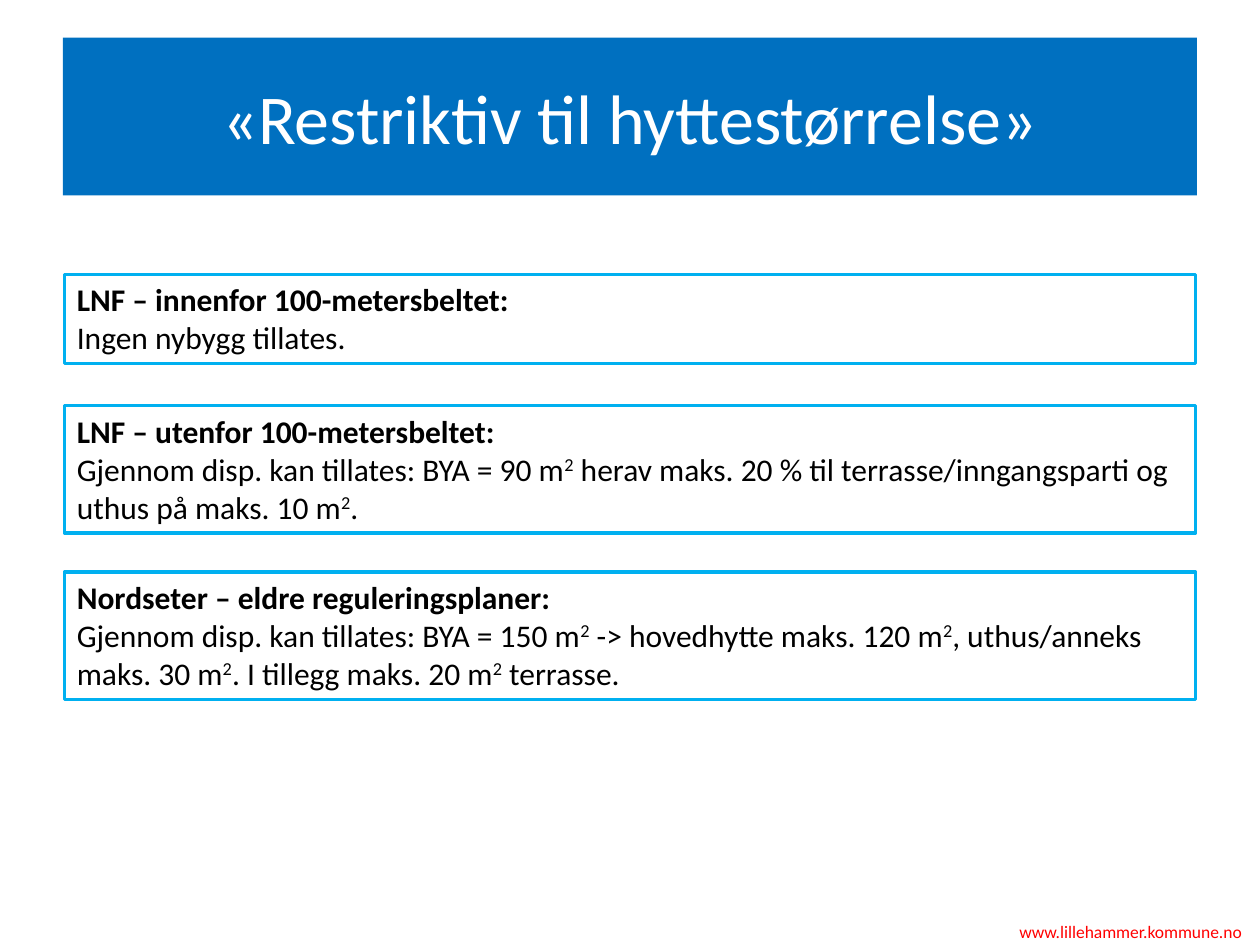
"""Build the slide on restrictions to cabin size."""
from dataclasses import dataclass

import pptx
import pptx.dml.color
import pptx.enum.shapes
import pptx.enum.text
import pptx.util
from pptx.util import Cm

COLORS = {
    "banner": "0070C0",
    "border": "00B0F0",
    "light": "FFFFFF",
    "dark": "000000",
    "address": "FF0000",
}
FONT_NAME = "Calibri"
BOX_LEFT = Cm(1.3)
BOX_WIDTH = Cm(22.8)


@dataclass
class RuleBox:
    top: float
    height: float
    heading: str
    body_parts: list[str]


RULE_BOXES = [
    RuleBox(5.53, 1.8, "LNF – innenfor 100-metersbeltet:", ["Ingen nybygg tillates."]),
    RuleBox(
        8.18,
        2.57,
        "LNF – utenfor 100-metersbeltet:",
        [
            "Gjennom disp. kan tillates: BYA = 90 m",
            " herav maks. 20 % til terrasse/inngangsparti og uthus på maks. 10 m",
            ".",
        ],
    ),
    RuleBox(
        11.53,
        2.57,
        "Nordseter – eldre reguleringsplaner:",
        [
            "Gjennom disp. kan tillates: BYA = 150 m",
            " -> hovedhytte maks. 120 m",
            ", uthus/anneks maks. 30 m",
            ". I tillegg maks. 20 m",
            " terrasse.",
        ],
    ),
]


def rgb(name: str) -> pptx.dml.color.RGBColor:
    return pptx.dml.color.RGBColor.from_string(COLORS[name])


def format_run(run, size: float, color: str, bold: bool = False) -> None:
    run.font.name = FONT_NAME
    run.font.size = pptx.util.Pt(size)
    run.font.bold = bold
    run.font.color.rgb = rgb(color)


def add_rectangle(slide, left: int, top: int, width: int, height: int):
    shape = slide.shapes.add_shape(
        pptx.enum.shapes.MSO_SHAPE.RECTANGLE, left, top, width, height
    )
    shape.shadow.inherit = False
    shape.text_frame.word_wrap = True
    return shape


def add_title(slide, text: str) -> None:
    shape = add_rectangle(slide, Cm(1.27), Cm(0.76), Cm(22.86), Cm(3.18))
    shape.fill.solid()
    shape.fill.fore_color.rgb = rgb("banner")
    shape.line.fill.background()
    shape.text_frame.vertical_anchor = pptx.enum.text.MSO_ANCHOR.MIDDLE
    shape.text_frame.text = text
    paragraph = shape.text_frame.paragraphs[0]
    paragraph.alignment = pptx.enum.text.PP_ALIGN.CENTER
    format_run(paragraph.runs[0], 40, "light")


def add_body(paragraph, parts: list[str]) -> None:
    paragraph.text = parts[0]
    for part in parts[1:]:
        exponent = paragraph.add_run()
        exponent.text = "2"
        exponent.font._element.set("baseline", "30000")
        paragraph.add_run().text = part
    for run in paragraph.runs:
        format_run(run, 18, "dark")


def add_rule_box(slide, box: RuleBox) -> None:
    shape = add_rectangle(slide, BOX_LEFT, Cm(box.top), BOX_WIDTH, Cm(box.height))
    shape.fill.background()
    shape.line.color.rgb = rgb("border")
    shape.line.width = pptx.util.Pt(2)
    text_frame = shape.text_frame
    text_frame.vertical_anchor = pptx.enum.text.MSO_ANCHOR.TOP
    text_frame.text = box.heading
    format_run(text_frame.paragraphs[0].runs[0], 18, "dark", bold=True)
    add_body(text_frame.add_paragraph(), box.body_parts)
    for paragraph in text_frame.paragraphs:
        paragraph.alignment = pptx.enum.text.PP_ALIGN.LEFT


def add_address(slide, text: str) -> None:
    shape = slide.shapes.add_textbox(Cm(20.3), Cm(18.44), Cm(5.26), Cm(0.69))
    shape.text_frame.word_wrap = False
    shape.text_frame.text = text
    format_run(shape.text_frame.paragraphs[0].runs[0], 10, "address")


def main() -> None:
    presentation = pptx.Presentation()
    presentation.slide_width = Cm(25.4)
    presentation.slide_height = Cm(19.05)
    slide = presentation.slides.add_slide(presentation.slide_layouts[6])
    add_address(slide, "www.lillehammer.kommune.no")
    add_title(slide, "«Restriktiv til hyttestørrelse»")
    for box in RULE_BOXES:
        add_rule_box(slide, box)
    presentation.save("out.pptx")


if __name__ == "__main__":
    main()
